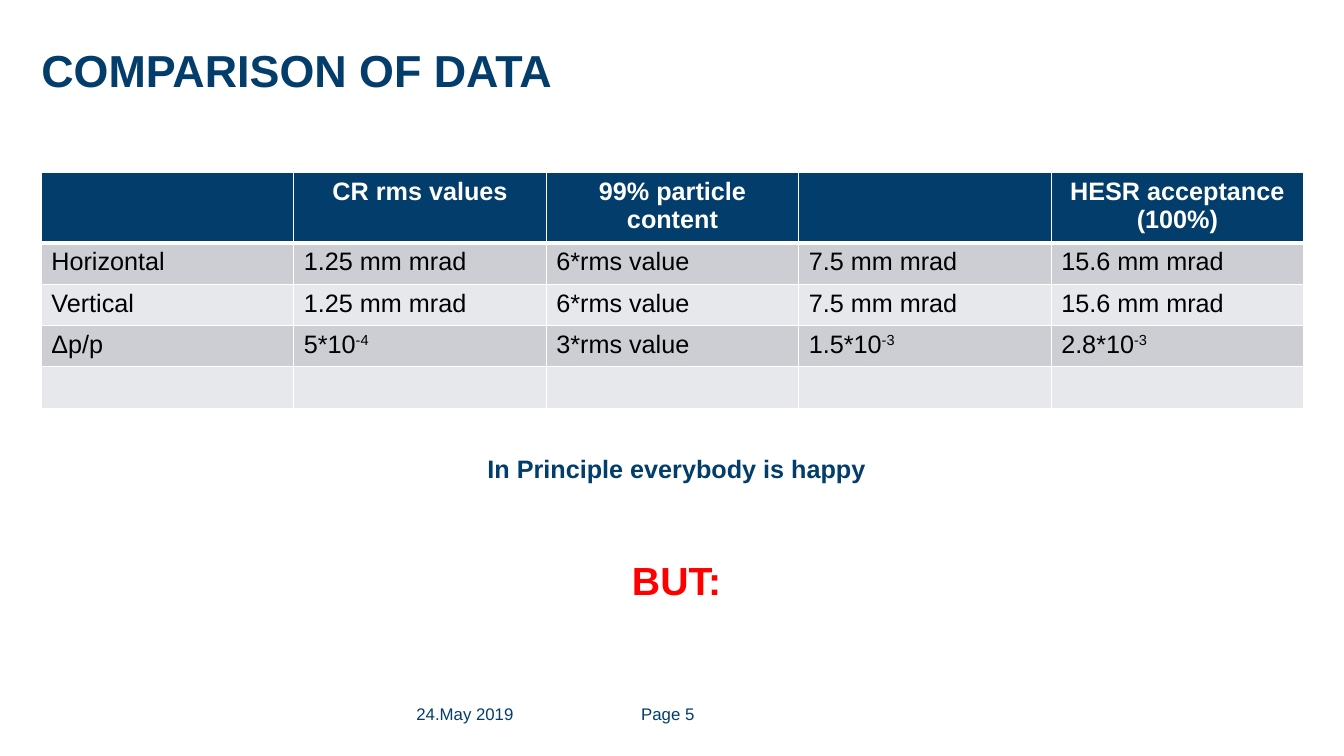
from lxml import etree
from pptx import Presentation
from pptx import util as u
from pptx.dml.color import RGBColor
from pptx.enum import text
from pptx.oxml.ns import qn

PX = u.Inches(1) // 100
HUES = {"navy": "023D6B", "white": "FFFFFF", "black": "000000",
        "red": "FF0000", "dark": "CCCED4", "light": "E7E8EB"}
ROWS = [
    ["", "CR rms values", "99% particle content", "", "HESR acceptance\n(100%)"],
    ["Horizontal", "1.25 mm mrad", "6*rms value", "7.5 mm mrad", "15.6 mm mrad"],
    ["Vertical", "1.25 mm mrad", "6*rms value", "7.5 mm mrad", "15.6 mm mrad"],
    ["Δp/p", "5*10^-4", "3*rms value", "1.5*10^-3", "2.8*10^-3"],
    [""] * 5,
]
MID = text.PP_ALIGN.CENTER


def hue(name):
    """Return the named colour."""
    return RGBColor.from_string(HUES[name])


def style(para, size, color, bold=False, align=None):
    """Set the font and alignment of a paragraph."""
    para.alignment = align
    font = para.font
    font.name, font.size, font.bold = "Arial", u.Pt(size), bold
    font.color.rgb = hue(color)


def write(para, words):
    """Fill a paragraph, raising what follows a caret."""
    base, _, power = words.partition("^")
    if base:
        para.add_run().text = base
    if power:
        run = para.add_run()
        run.text = power
        run._r.get_or_add_rPr().set("baseline", "30000")


def add_text(slide, box, lines, space=1.0):
    """Add a text box without insets; each line is words, gap and style."""
    frame = slide.shapes.add_textbox(*(n * PX for n in box)).text_frame
    frame.word_wrap = True
    frame.margin_left = frame.margin_right = 0
    frame.margin_top = frame.margin_bottom = 0
    for i, (words, gap, *look) in enumerate(lines):
        para = frame.add_paragraph() if i else frame.paragraphs[0]
        write(para, words)
        para.line_spacing = space
        if gap:
            para.space_before = u.Pt(gap)
        style(para, *look)


def edge(cell, side, width):
    """Draw one white border of a cell."""
    line = etree.SubElement(cell._tc.get_or_add_tcPr(), qn("a:ln" + side),
                            w=str(u.Pt(width)))
    fill = etree.SubElement(line, qn("a:solidFill"))
    etree.SubElement(fill, qn("a:srgbClr"), val=HUES["white"])


def fill_cell(cell, words, row):
    """Give a cell its borders, fill and text."""
    head = row == 0
    for side in "LRTB":
        thick = (row, side) in ((0, "B"), (1, "T"))
        edge(cell, side, 3 if thick else 1)
    cell.fill.solid()
    cell.fill.fore_color.rgb = hue("navy" if head else "dark" if row % 2 else "light")
    frame = cell.text_frame
    for i, line in enumerate(words.split("\n")):
        para = frame.add_paragraph() if i else frame.paragraphs[0]
        write(para, line)
        style(para, 18, "white" if head else "black", head, MID if head else None)


def add_grid(slide, box, rows, top):
    """Add the table with equal columns and a taller first row."""
    shape = slide.shapes.add_table(len(rows), len(rows[0]), *(n * PX for n in box))
    grid = shape.table
    grid.first_row = grid.horz_banding = False
    rest = (box[3] - top) // (len(rows) - 1)
    for r, row in enumerate(rows):
        grid.rows[r].height = (rest if r else top) * PX
        for c, words in enumerate(row):
            fill_cell(grid.cell(r, c), words, r)


def main():
    """Build the slide and save it."""
    deck = Presentation()
    deck.slide_width, deck.slide_height = u.Inches(13.33), u.Inches(7.5)
    slide = deck.slides.add_slide(deck.slide_layouts[6])
    add_text(slide, (41, 35, 1252, 123),
             [("COMPARISON OF DATA", 0, 32, "navy", True)], 1.14)
    add_grid(slide, (41, 171, 1252, 229), ROWS, 65)
    add_text(slide, (45, 446, 1252, 56),
             [("In Principle everybody is happy", 0, 18, "navy", True, MID),
              ("BUT:", 47, 28, "red", True, MID)], 1.14)
    add_text(slide, (413, 698, 175, 24), [("24.May 2019", 0, 12, "navy")])
    add_text(slide, (636, 698, 79, 24), [("Page 5", 0, 12, "navy")])
    deck.save("out.pptx")


if __name__ == "__main__":
    main()
